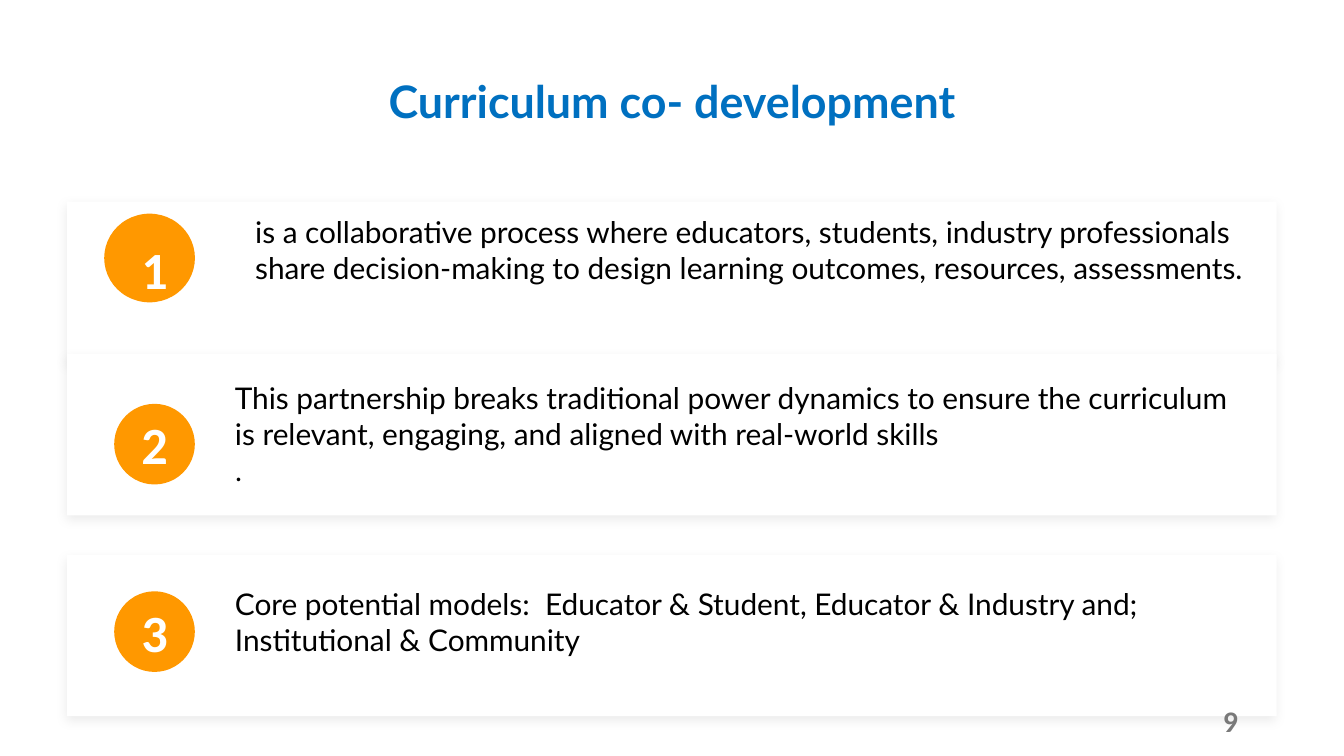
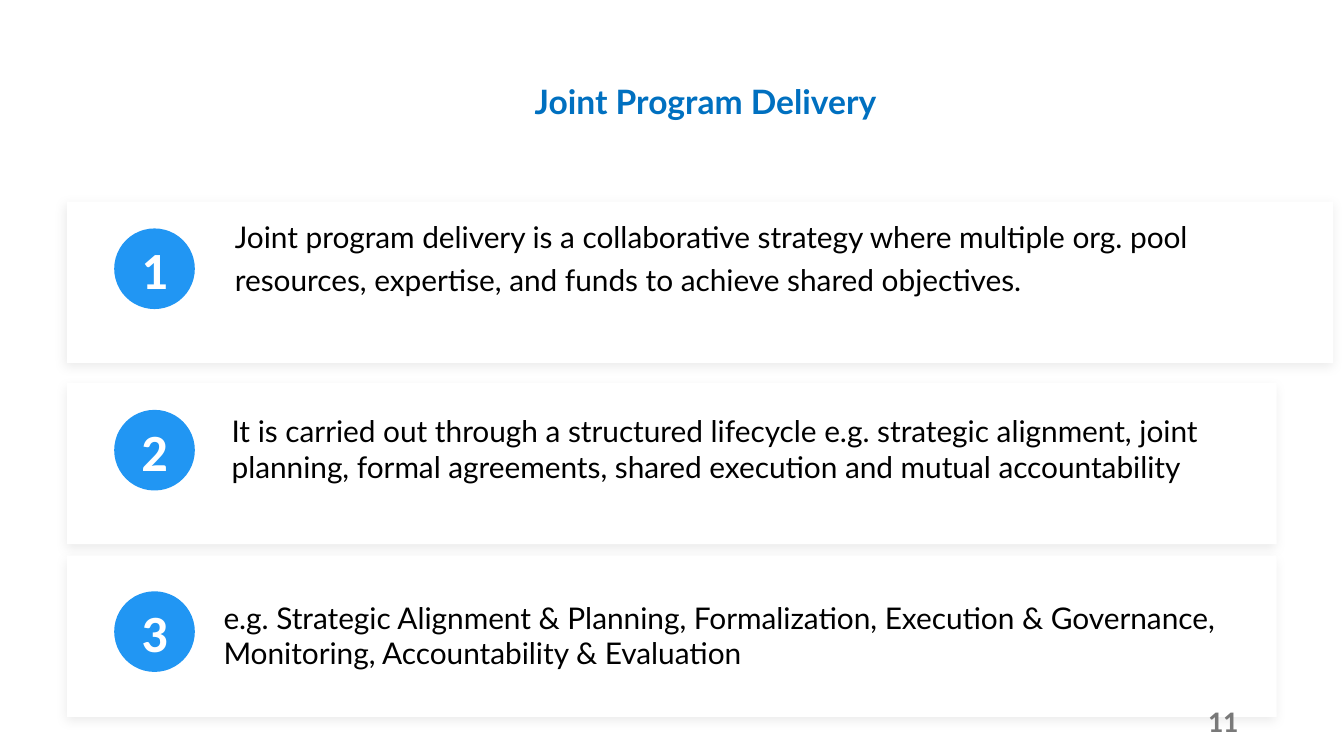
from lxml import etree
from pptx import Presentation
from pptx import util as u
from pptx.dml.color import RGBColor
from pptx.enum import shapes, text
from pptx.oxml.ns import qn

PX = 4572
WIDTH, HEIGHT = 2000, 1125
COLORS = {"title": "0070C0", "card": "FFFFFF", "body": "000000", "number": "FFFFFF",
          "page": "797979", "orange": "FF9800", "blue": "2196F3", "shadow": "000000"}
CARD_LEFT, CARD_HEIGHT = 100, 240
BADGE_LEFT, BADGE_SIZE = 170, 120
TITLE_BOX = (100, 80, 1800, 140)
PAGE_BOX = (1412, 1043, 450, 60)
ALIGN = {"left": text.PP_ALIGN.LEFT, "center": text.PP_ALIGN.CENTER,
         "right": text.PP_ALIGN.RIGHT}

SLIDES = [
    {"title": "Curriculum co- development", "title_size": 24, "title_indent": 0,
     "accent": "orange", "page": "9", "rows": [
         {"card": (300, 1800), "badge": (155, 318, 135, 132), "number_top": 340,
          "box": (360, 292, 1584, 160),
          "lines": [("is a collaborative process where educators, students, industry professionals "
                     "share decision-making to design learning outcomes, resources, assessments.", "Lato")]},
         {"card": (527, 1800), "badge": (BADGE_LEFT, 601, BADGE_SIZE, BADGE_SIZE), "number_top": 600,
          "box": (330, 600, 1540, 90),
          "lines": [("This partnership breaks traditional power dynamics to ensure the curriculum "
                     "is relevant, engaging, and aligned with real-world skills", "Lato"),
                    (".", "Calibri")]},
         {"card": (826, 1800), "number_top": 880, "box": (330, 880, 1540, 90),
          "lines": [("Core potential models:  Educator & Student, Educator & Industry and; "
                     "Institutional & Community", "Lato")]},
     ]},
    {"title": "Joint Program Delivery", "title_size": 18, "title_indent": 100,
     "accent": "blue", "page": "11", "rows": [
         {"card": (300, 1884), "number_top": 340, "box": (330, 334, 1540, 90), "spacing": 1.2,
          "lines": [("Joint program delivery is a collaborative strategy where multiple org. pool "
                     "resources, expertise, and funds to achieve shared objectives.", "Lato")]},
         {"card": (570, 1800), "number_top": 610, "box": (325, 594, 1540, 146),
          "lines": [("It is carried out through a structured lifecycle e.g. strategic alignment, joint "
                     "planning, formal agreements, shared execution and mutual accountability", "Lato")]},
         {"card": (827, 1800), "number_top": 880, "box": (313, 900, 1640, 90),
          "lines": [("e.g. Strategic Alignment & Planning, Formalization, Execution & Governance,", "Lato"),
                    ("Monitoring, Accountability & Evaluation", "Lato")]},
     ]},
]


def place(box):
    return [v * PX for v in box]


def add_text(s, box, lines, size=16, color="body", bold=False, align="left",
             inset=None, indent=0, spacing=None):
    tf = s.shapes.add_textbox(*place(box)).text_frame
    tf.word_wrap = True
    tf.vertical_anchor = text.MSO_ANCHOR.MIDDLE
    if inset is not None:
        tf.margin_left = tf.margin_right = tf.margin_top = tf.margin_bottom = inset * PX
    for i, (line, font) in enumerate(lines):
        p = tf.add_paragraph() if i else tf.paragraphs[0]
        p.alignment = ALIGN[align]
        if spacing:
            p.line_spacing = spacing
        if indent:
            pPr = p._p.get_or_add_pPr()
            pPr.set("marL", str(indent * PX))
            pPr.set("indent", "0")
        r = p.add_run()
        r.text = line
        r.font.name = font
        r.font.size = u.Pt(size)
        r.font.bold = bold
        r.font.color.rgb = RGBColor.from_string(COLORS[color])


def add_block(s, kind, box, color):
    sp = s.shapes.add_shape(kind, *place(box))
    sp.fill.solid()
    sp.fill.fore_color.rgb = RGBColor.from_string(COLORS[color])
    sp.line.fill.background()
    sp.shadow.inherit = False
    return sp


def add_card(s, box):
    sp = add_block(s, shapes.MSO_SHAPE.RECTANGLE, box, "card")
    effects = sp._element.spPr.find(qn("a:effectLst"))
    shadow = etree.SubElement(effects, qn("a:outerShdw"), blurRad=str(u.Pt(6)),
                              dist=str(u.Pt(2)), dir=str(135 * 60000),
                              algn="bl", rotWithShape="0")
    color = etree.SubElement(shadow, qn("a:srgbClr"), val=COLORS["shadow"])
    etree.SubElement(color, qn("a:alpha"), val="8000")


def add_row(s, row, accent, number):
    top, width = row["card"]
    add_card(s, (CARD_LEFT, top, width, CARD_HEIGHT))
    number_box = (BADGE_LEFT, row["number_top"], BADGE_SIZE, BADGE_SIZE)
    add_block(s, shapes.MSO_SHAPE.OVAL, row.get("badge", number_box), accent)
    add_text(s, number_box, [(str(number), "Calibri")], size=28, color="number",
             bold=True, align="center")
    add_text(s, row["box"], row["lines"], spacing=row.get("spacing"))


def main():
    prs = Presentation()
    prs.slide_width, prs.slide_height = WIDTH * PX, HEIGHT * PX
    for content in SLIDES:
        s = prs.slides.add_slide(prs.slide_layouts[6])
        add_text(s, TITLE_BOX, [(content["title"], "Lato")],
                 size=content["title_size"], color="title", bold=True, align="center",
                 inset=0, indent=content["title_indent"])
        for number, row in enumerate(content["rows"], 1):
            add_row(s, row, content["accent"], number)
        add_text(s, PAGE_BOX, [(content["page"], "Calibri")],
                 color="page", bold=True, align="right")
    prs.save("out.pptx")


if __name__ == "__main__":
    main()
